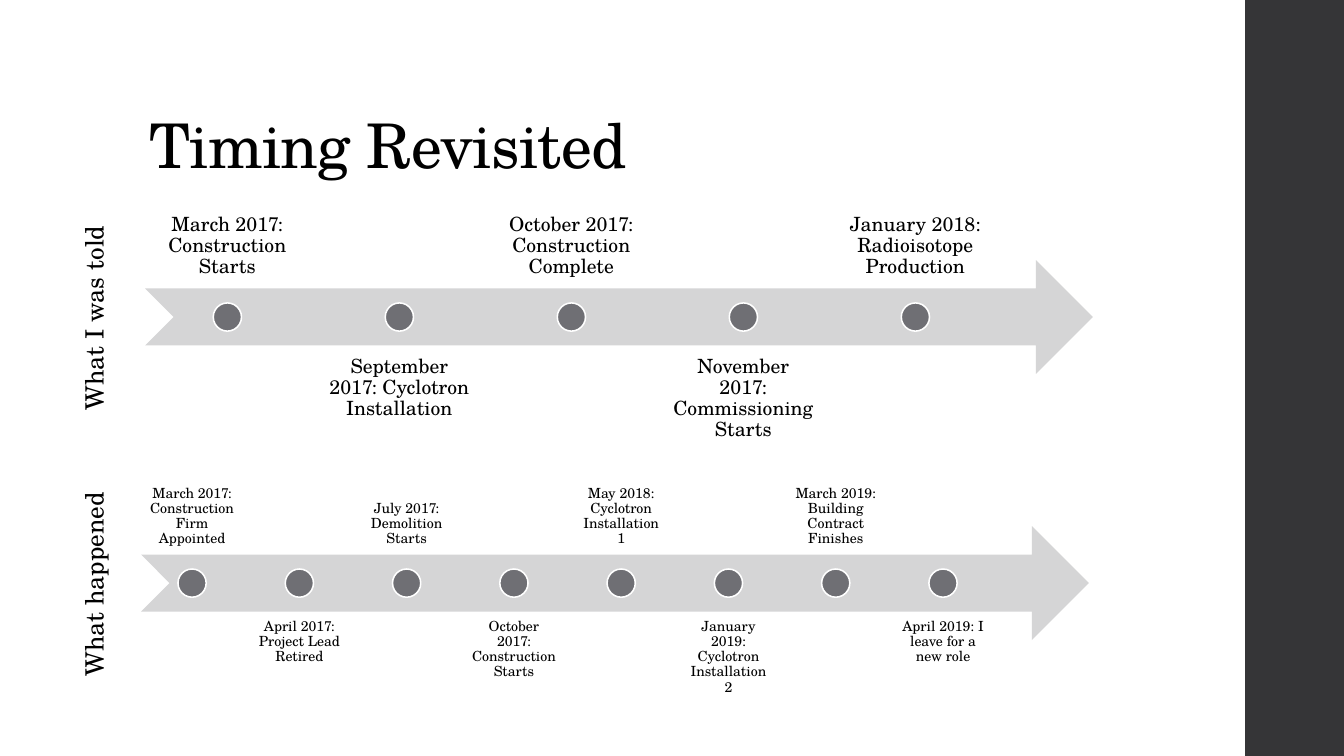
"""Build the "Timing Revisited" slide with its planned and actual timelines."""
from pptx import Presentation
from pptx import util as u
from pptx.dml import color
from pptx.enum import shapes, text

TITLE = "Timing Revisited"
FONT = "TeX Gyre Schola"
COLOURS = {"text": "000000", "sidebar": "353537", "arrow": "D5D5D6",
           "dot": "6F6F74", "outline": "FFFFFF"}
TIMELINES = [
    {"label": "What I was told", "left": 1.44, "top": 2.58, "step": 1.706,
     "width": 1.63, "inset": 0.11, "size": 14,
     "events": ["March 2017: Construction Starts",
                "September 2017: Cyclotron Installation",
                "October 2017: Construction Complete",
                "November 2017: Commissioning Starts",
                "January 2018: Radioisotope Production"]},
    {"label": "What happened", "left": 1.4, "top": 5.22, "step": 1.064,
     "width": 1.01, "inset": 0.08, "size": 10,
     "events": ["March 2017: Construction Firm Appointed",
                "April 2017: Project Lead Retired",
                "July 2017: Demolition Starts",
                "October 2017: Construction Starts",
                "May 2018: Cyclotron Installation 1",
                "January 2019: Cyclotron Installation 2",
                "March 2019: Building Contract Finishes",
                "April 2019: I leave for a new role"]},
]
ARROW_WIDTH, BAND_HEIGHT, TEXT_OFFSET = 9.4, 1.13, 0.845
DOT_SIZE = 0.28


def paint(colour_format, name):
    colour_format.rgb = color.RGBColor.from_string(COLOURS[name])


def add_filled(parent, kind, box, fill):
    shape = parent.shapes.add_shape(kind, *map(u.Inches, box))
    shape.shadow.inherit = False
    shape.fill.solid()
    paint(shape.fill.fore_color, fill)
    shape.line.fill.background()
    return shape


def add_text(parent, words, box, size, frame_format, paragraph_format):
    shape = parent.shapes.add_textbox(*map(u.Inches, box))
    frame = shape.text_frame
    paragraph = frame.paragraphs[0]
    run = paragraph.add_run()
    run.text = words
    font_format = {"name": FONT, "size": u.Pt(size)}
    for target, values in ((frame, frame_format), (paragraph, paragraph_format),
                           (run.font, font_format)):
        for name, value in values.items():
            setattr(target, name, value)
    paint(run.font.color, "text")
    return shape


def add_timeline(slide, timeline):
    left, top, width = timeline["left"], timeline["top"], timeline["width"]
    group = slide.shapes.add_group_shape()
    add_filled(group, shapes.MSO_SHAPE.NOTCHED_RIGHT_ARROW,
               (left, top, ARROW_WIDTH, BAND_HEIGHT), "arrow")
    sides = ("left", "top", "right", "bottom")
    margins = {f"margin_{side}": u.Inches(timeline["inset"]) for side in sides}
    for index, event in enumerate(timeline["events"]):
        event_left = left + index * timeline["step"]
        above = index % 2 == 0
        event_top = top - TEXT_OFFSET if above else top + TEXT_OFFSET
        anchor = text.MSO_ANCHOR.BOTTOM if above else text.MSO_ANCHOR.TOP
        add_text(group, event, (event_left, event_top, width, BAND_HEIGHT),
                 timeline["size"],
                 {"word_wrap": True, "vertical_anchor": anchor, **margins},
                 {"alignment": text.PP_ALIGN.CENTER, "line_spacing": 0.9})
        dot_left = event_left + (width - DOT_SIZE) / 2
        dot_top = top + (BAND_HEIGHT - DOT_SIZE) / 2
        dot = add_filled(group, shapes.MSO_SHAPE.OVAL,
                         (dot_left, dot_top, DOT_SIZE, DOT_SIZE), "dot")
        paint(dot.line.color, "outline")
        dot.line.width = u.Pt(1.1)


def add_label(slide, timeline):
    label = add_text(slide, timeline["label"],
                     (-0.1, timeline["top"] + 0.36, 2.06, 0.4), 18,
                     {"word_wrap": False,
                      "auto_size": text.MSO_AUTO_SIZE.SHAPE_TO_FIT_TEXT}, {})
    label.rotation = 270


def main():
    presentation = Presentation()
    presentation.slide_width = u.Inches(13.33)
    presentation.slide_height = u.Inches(7.5)
    slide = presentation.slides.add_slide(presentation.slide_layouts[6])
    add_filled(slide, shapes.MSO_SHAPE.RECTANGLE, (12.35, 0, 0.98, 7.5), "sidebar")
    title = add_text(slide, TITLE, (1.38, 0.4, 10.6, 1.45), 44,
                     {"word_wrap": True, "vertical_anchor": text.MSO_ANCHOR.BOTTOM},
                     {"line_spacing": 0.9})
    title.text_frame.paragraphs[0].runs[0]._r.get_or_add_rPr().set("spc", "-50")
    for timeline in TIMELINES:
        add_timeline(slide, timeline)
    for timeline in TIMELINES:
        add_label(slide, timeline)
    presentation.save("out.pptx")


if __name__ == "__main__":
    main()
